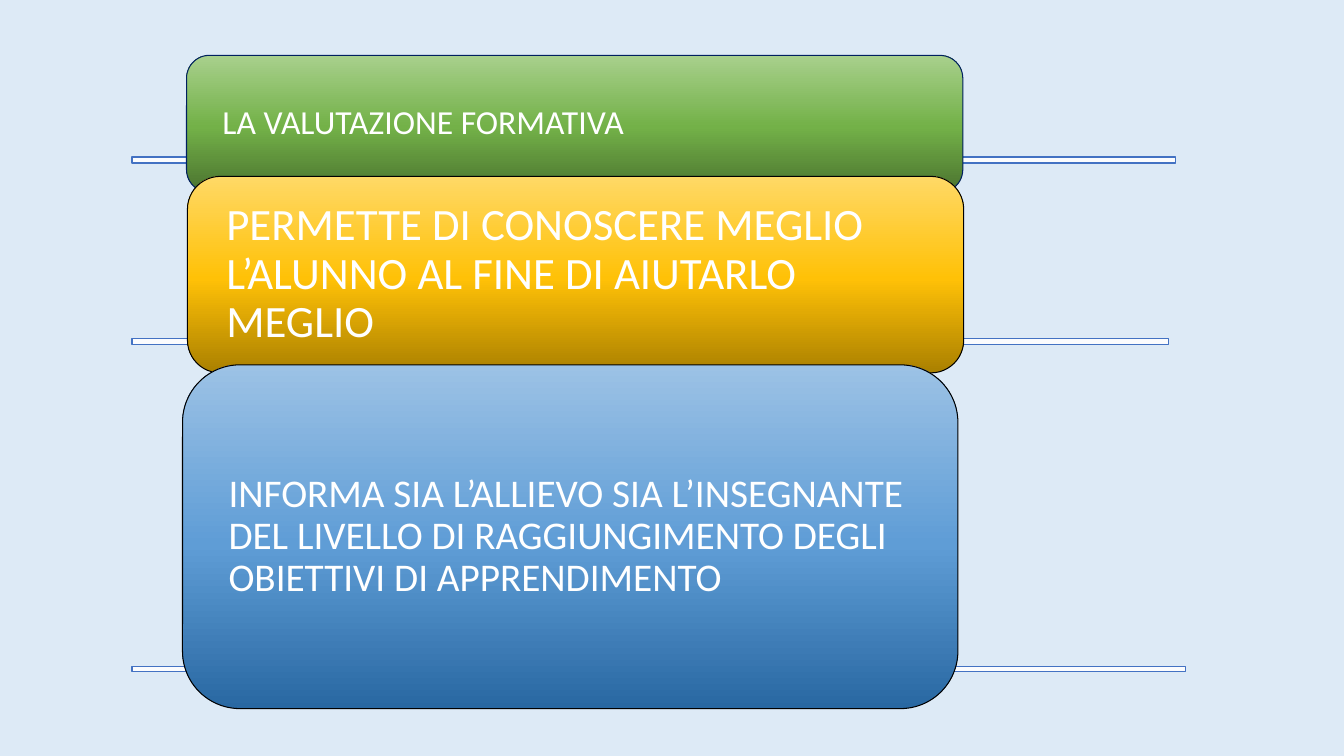
"""Build a slide with three stacked gradient cards on formative assessment."""
from copy import deepcopy

from pptx import Presentation
from pptx.dml.color import RGBColor
from pptx.enum.shapes import MSO_SHAPE
from pptx.enum.text import MSO_ANCHOR, PP_ALIGN
from pptx.oxml.ns import qn
from pptx.util import Inches, Pt
from lxml.etree import SubElement

COLORS = {
    "background": "DDEAF6", "white": "FFFFFF", "bar line": "4372C3",
    "navy": "002060", "black": "000000",
}
GRADIENTS = {
    "green": ("4B732F", "73B148", "A8D08C"),
    "gold": ("AA8000", "FFC107", "FFD966"),
    "blue": ("2968A2", "5F9DD6", "9CC2E5"),
}
STOPS = (0, 0.48, 1)

CARDS = [
    {"text": "LA VALUTAZIONE FORMATIVA", "size": 24, "gradient": "green",
     "line": "navy", "card": (13.88, 7.33, 57.76, 18.13), "bar": (20.8, 77.64, 0.8)},
    {"text": "PERMETTE DI CONOSCERE MEGLIO L’ALUNNO AL FINE DI AIUTARLO MEGLIO",
     "size": 32, "gradient": "gold",
     "line": "black", "card": (13.95, 23.33, 57.76, 26), "bar": (44.8, 77.12, 0.8)},
    {"text": "INFORMA SIA L’ALLIEVO SIA L’INSEGNANTE DEL LIVELLO DI "
             "RAGGIUNGIMENTO DEGLI OBIETTIVI DI APPRENDIMENTO",
     "size": 28, "gradient": "blue",
     "line": "black", "card": (13.58, 48.27, 57.69, 45.47), "bar": (88.13, 78.39, 0.67)},
]
BAR_LEFT = 9.83
WIDTH, HEIGHT = Inches(13.33), Inches(7.5)


def color(name):
    return RGBColor.from_string(COLORS[name])


def add_box(slide, kind, percents, line, line_width):
    sides = (WIDTH, HEIGHT, WIDTH, HEIGHT)
    box = [int(side * percent / 100) for side, percent in zip(sides, percents)]
    shape = slide.shapes.add_shape(kind, *box)
    shape.shadow.inherit = False
    shape.line.color.rgb = color(line)
    shape.line.width = Pt(line_width)
    return shape


def add_bar(slide, top, width, height):
    bar = add_box(slide, MSO_SHAPE.RECTANGLE, (BAR_LEFT, top, width, height), "bar line", 1)
    bar.fill.solid()
    bar.fill.fore_color.rgb = color("white")
    fill_color = bar._element.spPr.find(qn("a:solidFill")).find(qn("a:srgbClr"))
    SubElement(fill_color, qn("a:alpha")).set("val", "89000")


def fill_gradient(shape, shades):
    shape.fill.gradient()
    shape.fill.gradient_angle = 90
    stop_list = shape._element.spPr.find(qn("a:gradFill")).find(qn("a:gsLst"))
    stop_list.append(deepcopy(stop_list[-1]))
    for stop, position, shade in zip(shape.fill.gradient_stops, STOPS, shades):
        stop.position = position
        stop.color.rgb = RGBColor.from_string(shade)


def add_card(slide, card):
    shape = add_box(slide, MSO_SHAPE.ROUNDED_RECTANGLE, card["card"], card["line"], 0.75)
    shape.adjustments[0] = 0.167
    fill_gradient(shape, GRADIENTS[card["gradient"]])
    frame = shape.text_frame
    frame.word_wrap = True
    frame.vertical_anchor = MSO_ANCHOR.MIDDLE
    frame.margin_left = frame.margin_right = Inches(0.29)
    frame.margin_top = frame.margin_bottom = 0
    paragraph = frame.paragraphs[0]
    paragraph.text = card["text"]
    paragraph.alignment = PP_ALIGN.LEFT
    paragraph.line_spacing = 0.9
    paragraph.font.name = "Calibri"
    paragraph.font.size = Pt(card["size"])
    paragraph.font.color.rgb = color("white")


def main():
    presentation = Presentation()
    presentation.slide_width, presentation.slide_height = WIDTH, HEIGHT
    slide = presentation.slides.add_slide(presentation.slide_layouts[6])
    slide.background.fill.solid()
    slide.background.fill.fore_color.rgb = color("background")
    for card in CARDS:
        add_bar(slide, *card["bar"])
        add_card(slide, card)
    presentation.save("out.pptx")


if __name__ == "__main__":
    main()
